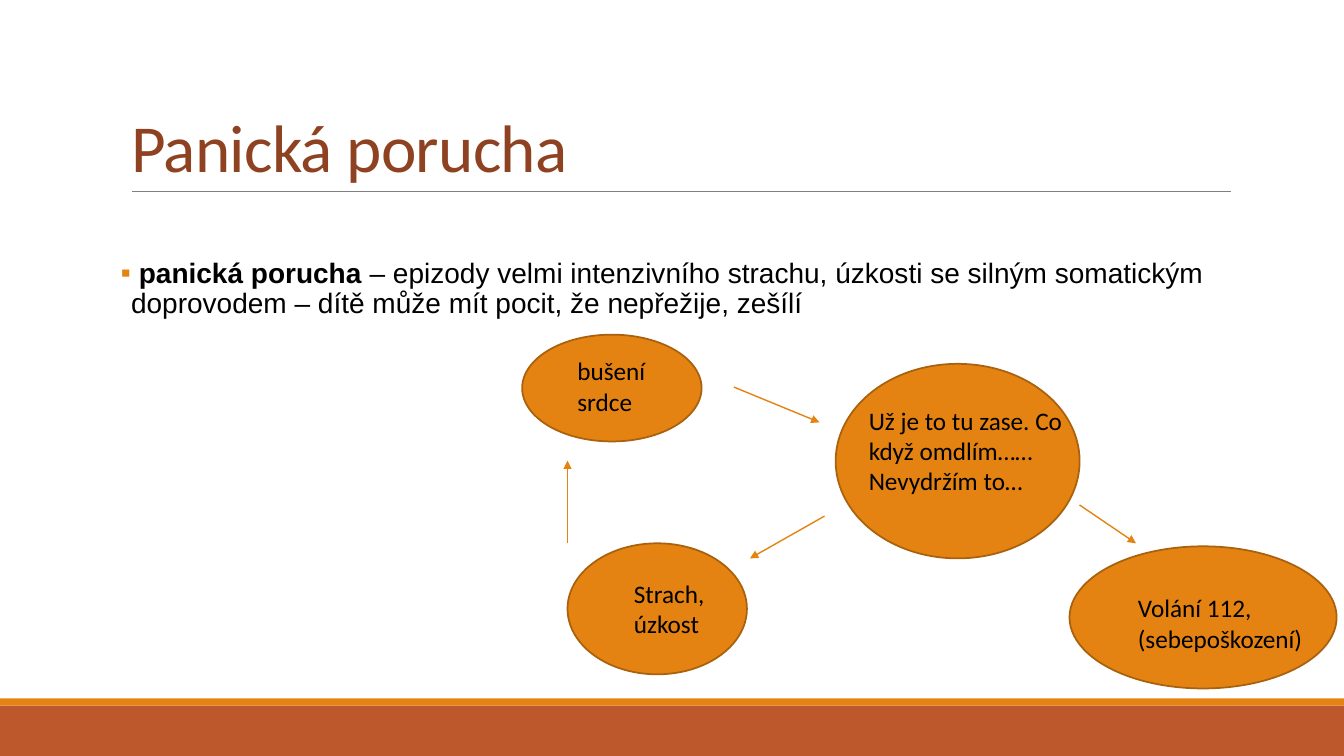
import lxml.etree
import pptx
import pptx.dml.color
import pptx.enum.shapes
import pptx.enum.text
import pptx.oxml.ns
import pptx.util

THEME = {
    "orange": "E48312", "rust": "BD582C", "outline": "A9610D",
    "rule": "808080", "title": "8E4221", "text": "000000",
    "heading_font": "Calibri", "body_font": "Arial",
    "title_size": 48, "body_size": 20, "label_size": 18,
}
CELL = pptx.util.Inches(0.1)  # grid of 133.3 columns by 75 rows
COLS, ROWS = 133.33, 75
MSO = pptx.enum.shapes.MSO_SHAPE
qn = pptx.oxml.ns.qn


def grid(*cells):
    return [round(c * CELL) for c in cells]


def style(obj, **values):
    """Set attributes; a colour name from the theme sets the rgb colour."""
    for name, value in values.items():
        if name == "rgb":
            value = pptx.dml.color.RGBColor.from_string(THEME[value])
        setattr(obj, name, value)


prs = pptx.Presentation()
prs.slide_width, prs.slide_height = grid(COLS, ROWS)
s = prs.slides.add_slide(prs.slide_layouts[1])

# Footer bands
for top, height, colour in [(70, 5, "rust"), (69.3, 0.7, "orange")]:
    sp = s.shapes.add_shape(MSO.RECTANGLE, *grid(0, top, COLS, height))
    sp.shadow.inherit = False
    sp.fill.solid()
    style(sp.fill.fore_color, rgb=colour)
    sp.line.fill.background()

# Title
title, body = s.placeholders
box = zip(("left", "top", "width", "height"), grid(12, 3.1, 110, 15.9))
style(title, **dict(box))
tf = title.text_frame
style(tf, text="Panická porucha", word_wrap=True,
      auto_size=pptx.enum.text.MSO_AUTO_SIZE.NONE,
      vertical_anchor=pptx.enum.text.MSO_ANCHOR.BOTTOM)
p = tf.paragraphs[0]
style(p, alignment=pptx.enum.text.PP_ALIGN.LEFT, line_spacing=0.85)
r = p.runs[0]
style(r.font, name=THEME["heading_font"], size=pptx.util.Pt(THEME["title_size"]))
style(r.font.color, rgb="title")
r.font._element.set("spc", "-50")

# Definition
box = zip(("left", "top", "width", "height"), grid(12, 20.2, 110, 44))
style(body, **dict(box))
tf = body.text_frame
style(tf, word_wrap=True, auto_size=pptx.enum.text.MSO_AUTO_SIZE.NONE,
      vertical_anchor=pptx.enum.text.MSO_ANCHOR.TOP,
      margin_left=0, margin_right=0, margin_top=grid(5.5)[0])
p = tf.paragraphs[0]
style(p, line_spacing=0.9, space_before=pptx.util.Pt(0), space_after=pptx.util.Pt(2))
for text, bold in [
    (" panická porucha ", True),
    ("– epizody velmi intenzivního strachu, úzkosti se silným somatickým "
     "doprovodem – dítě může mít pocit, že nepřežije, zešílí", False),
]:
    r = p.add_run()
    r.text = text
    style(r.font, name=THEME["body_font"], bold=bold,
          size=pptx.util.Pt(THEME["body_size"]))
    style(r.font.color, rgb="text")

# Square bullet with a hanging indent
pPr = p._p.get_or_add_pPr()
pPr.set("marL", str(CELL))
pPr.set("indent", str(-CELL))
buClr = lxml.etree.SubElement(pPr, qn("a:buClr"))
lxml.etree.SubElement(buClr, qn("a:srgbClr"), val=THEME["orange"])
lxml.etree.SubElement(pPr, qn("a:buFont"), typeface=THEME["heading_font"])
lxml.etree.SubElement(pPr, qn("a:buChar"), char="▪")

# Stages of the panic circle: ellipse, label box, label
stages = [
    ((51.8, 33.2, 17.8, 10.6), (56.3, 34.8, 13.3, 7.1), "bušení srdce"),
    ((82.9, 36.1, 24.2, 19.3), (85.2, 39.7, 21.9, 10.1),
     "Už je to tu zase. Co když omdlím…… Nevydržím to…"),
    ((106.1, 54.2, 26.5, 14.1), (111.9, 58.3, 18.6, 7.1),
     "Volání 112, (sebepoškození)"),
    ((56.3, 53.9, 17.8, 13), (61.9, 56.9, 10.9, 7.1), "Strach, úzkost"),
]
for oval, label, text in stages:
    sp = s.shapes.add_shape(MSO.OVAL, *grid(*oval))
    sp.shadow.inherit = False
    sp.fill.solid()
    style(sp.fill.fore_color, rgb="orange")
    style(sp.line, width=pptx.util.Pt(1.25))
    style(sp.line.color, rgb="outline")

    tf = s.shapes.add_textbox(*grid(*label)).text_frame
    style(tf, text=text, word_wrap=True,
          auto_size=pptx.enum.text.MSO_AUTO_SIZE.SHAPE_TO_FIT_TEXT)
    r = tf.paragraphs[0].runs[0]
    style(r.font, name=THEME["heading_font"],
          size=pptx.util.Pt(THEME["label_size"]))
    style(r.font.color, rgb="text")

# Title rule and the arrows between stages
lines = [
    ((13.1, 19, 122.1, 19), "rule", 0.5, False),
    ((72.8, 38.4, 81.3, 41.9), "orange", 1, True),
    ((81.8, 51.2, 74.4, 55.4), "orange", 1, True),
    ((56.3, 53.9, 56.3, 45.7), "orange", 1, True),
    ((107.1, 50.1, 112.7, 53.9), "orange", 1, True),
]
for ends, colour, width, arrow in lines:
    cx = s.shapes.add_connector(pptx.enum.shapes.MSO_CONNECTOR.STRAIGHT, *grid(*ends))
    style(cx.line, width=pptx.util.Pt(width))
    style(cx.line.color, rgb=colour)
    if arrow:
        lxml.etree.SubElement(cx.line._get_or_add_ln(), qn("a:tailEnd"), type="triangle")
    lxml.etree.SubElement(cx._element.spPr, qn("a:effectLst"))

prs.save("out.pptx")
